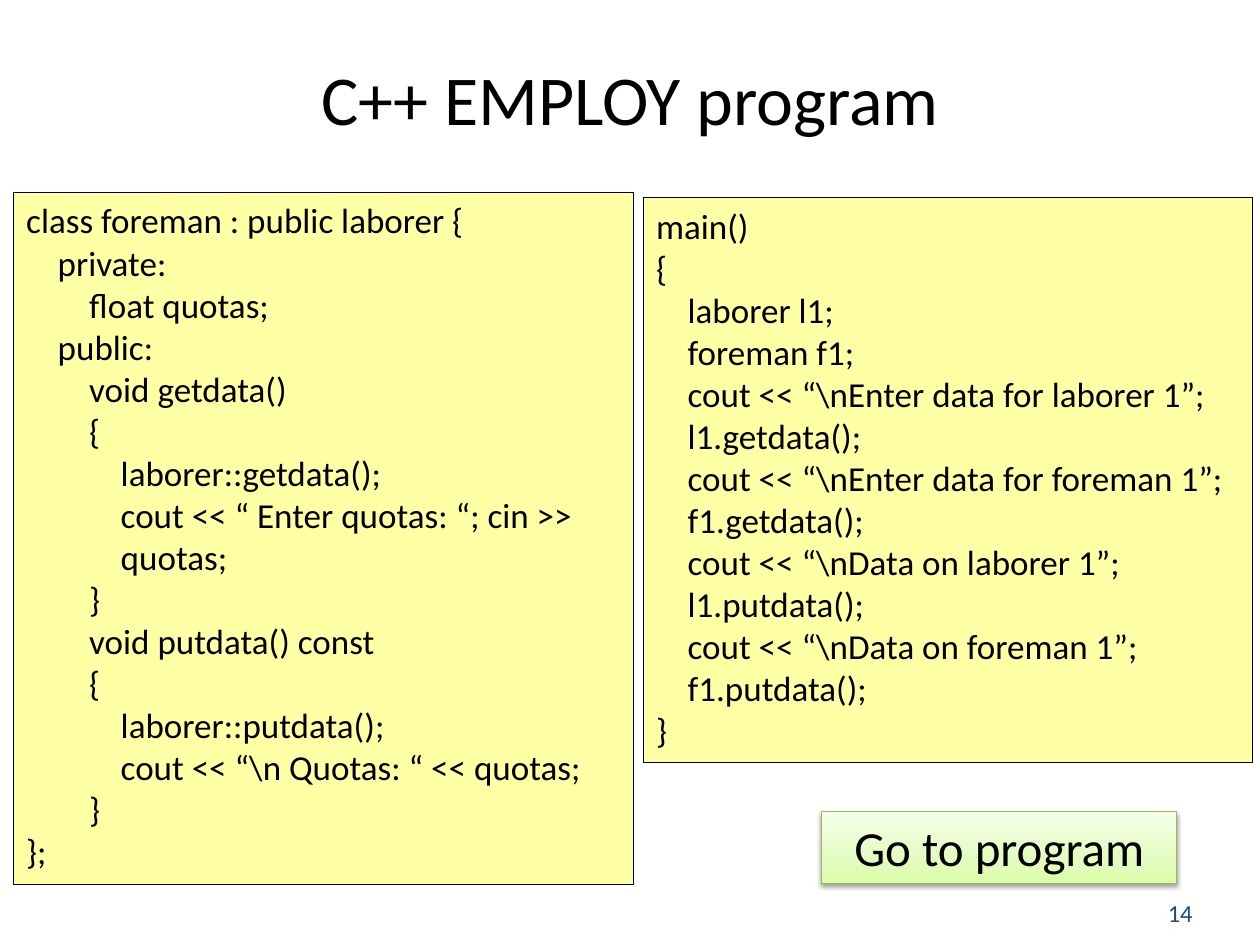
"""Builds the C++ EMPLOY program slide."""
from dataclasses import dataclass

from lxml import etree
from pptx import Presentation, util as u
from pptx.dml.color import RGBColor
from pptx.enum import shapes, text
from pptx.oxml.ns import qn


@dataclass(frozen=True)
class Theme:
    font: str = "Calibri"
    ink: str = "000000"
    number: str = "1F497D"
    code_fill: str = "FFFF00"
    code_alpha: int = 35
    button_line: str = "98B955"
    button_stops: tuple = ((0, "DAFDA7"), (35, "E4FCC2"), (100, "F5FFE7"))
    title_size: int = 40
    button_size: int = 28
    code_size: int = 20
    number_size: int = 14
    line_width: float = 0.75
    code_indent: float = 0.25


def add_element(parent, tag, **attributes):
    values = {name: str(value) for name, value in attributes.items()}
    return etree.SubElement(parent, qn(tag), values)


def add_color(parent, color, alpha=100):
    element = add_element(parent, "a:srgbClr", val=color)
    if alpha < 100:
        add_element(element, "a:alpha", val=alpha * 1000)


class SlideBuilder:
    columns, rows = 100, 75

    def __init__(self, presentation, theme):
        self.presentation = presentation
        self.theme = theme
        self.slide = presentation.slides.add_slide(presentation.slide_layouts[5])

    def box(self, column, row, width, height):
        cell_width = self.presentation.slide_width / self.columns
        cell_height = self.presentation.slide_height / self.rows
        return [u.Emu(round(length)) for length in (
            column * cell_width, row * cell_height, width * cell_width, height * cell_height)]

    def set_text(self, shape, lines, size, color, align=text.PP_ALIGN.LEFT,
                 anchor=text.MSO_ANCHOR.MIDDLE):
        frame = shape.text_frame
        frame.word_wrap = True
        frame.vertical_anchor = anchor
        frame.text = "\n".join(line for level, line in lines)
        for paragraph, (level, line) in zip(frame.paragraphs, lines):
            paragraph.alignment = align
            paragraph.font.name = self.theme.font
            paragraph.font.size = u.Pt(size)
            paragraph.font.color.rgb = RGBColor.from_string(color)
            if level:
                margin = u.Inches(level * self.theme.code_indent)
                paragraph._p.get_or_add_pPr().set("marL", str(margin))

    def title(self, words, *place):
        shape = self.slide.shapes.title
        shape.left, shape.top, shape.width, shape.height = self.box(*place)
        self.set_text(shape, [(0, words)], self.theme.title_size, self.theme.ink,
                      text.PP_ALIGN.CENTER)

    def rectangle(self, line_color, *place):
        shape = self.slide.shapes.add_shape(shapes.MSO_SHAPE.RECTANGLE, *self.box(*place))
        shape.shadow.inherit = False
        shape.line.color.rgb = RGBColor.from_string(line_color)
        shape.line.width = u.Pt(self.theme.line_width)
        return shape

    def code(self, lines, *place):
        shape = self.rectangle(self.theme.ink, *place)
        shape.fill.solid()
        shape.fill.fore_color.rgb = RGBColor.from_string(self.theme.code_fill)
        color = shape._element.spPr.find(qn("a:solidFill"))[0]
        add_element(color, "a:alpha", val=self.theme.code_alpha * 1000)
        self.set_text(shape, lines, self.theme.code_size, self.theme.ink,
                      anchor=text.MSO_ANCHOR.TOP)

    def button(self, words, *place):
        shape = self.rectangle(self.theme.button_line, *place)
        shape.fill.gradient()
        shape.fill.gradient_angle = 90
        properties = shape._element.spPr
        stops = properties.find(qn("a:gradFill")).find(qn("a:gsLst"))
        for stop in list(stops):
            stops.remove(stop)
        for position, color in self.theme.button_stops:
            add_color(add_element(stops, "a:gs", pos=position * 1000), color)
        shadow = add_element(properties.find(qn("a:effectLst")), "a:outerShdw",
                             blurRad=int(u.Pt(3.1)), dist=int(u.Pt(1.6)), dir=90 * 60000,
                             rotWithShape=0)
        add_color(shadow, self.theme.ink, 38)
        self.set_text(shape, [(0, words)], self.theme.button_size, self.theme.ink,
                      text.PP_ALIGN.CENTER)

    def number(self, words, *place):
        shape = self.slide.shapes.add_textbox(*self.box(*place))
        self.set_text(shape, [(0, words)], self.theme.number_size, self.theme.number)


FOREMAN_CLASS = [
    (0, "class foreman : public laborer {"),
    (1, "private:"),
    (2, "float quotas;"),
    (1, "public:"),
    (2, "void getdata()"),
    (2, "{"),
    (3, "laborer::getdata();"),
    (3, "cout << “ Enter quotas: “; cin >> quotas;"),
    (2, "}"),
    (2, "void putdata() const"),
    (2, "{"),
    (3, "laborer::putdata();"),
    (3, "cout << “\\n Quotas: “ << quotas;"),
    (2, "}"),
    (0, "};"),
]

MAIN_FUNCTION = [
    (0, "main()"),
    (0, "{"),
    (1, "laborer l1;"),
    (1, "foreman f1;"),
    (1, "cout << “\\nEnter data for laborer 1”;"),
    (1, "l1.getdata();"),
    (1, "cout << “\\nEnter data for foreman 1”;"),
    (1, "f1.getdata();"),
    (1, "cout << “\\nData on laborer 1”;"),
    (1, "l1.putdata();"),
    (1, "cout << “\\nData on foreman 1”;"),
    (1, "f1.putdata();"),
    (0, "}"),
]


def main():
    presentation = Presentation()
    presentation.slide_width, presentation.slide_height = u.Inches(10), u.Inches(7.5)
    builder = SlideBuilder(presentation, Theme())
    builder.number("14", 91.7, 70.8, 6.7, 3.3)
    builder.title("C++ EMPLOY program", 5, 3.8, 90, 7.8)
    builder.code(FOREMAN_CLASS, 1.1, 15.3, 49.2, 54.9)
    builder.code(MAIN_FUNCTION, 51.1, 15.7, 48.3, 44.8)
    builder.button("Go to program", 65.2, 64.4, 28.2, 5.7)
    presentation.save("out.pptx")


if __name__ == "__main__":
    main()
